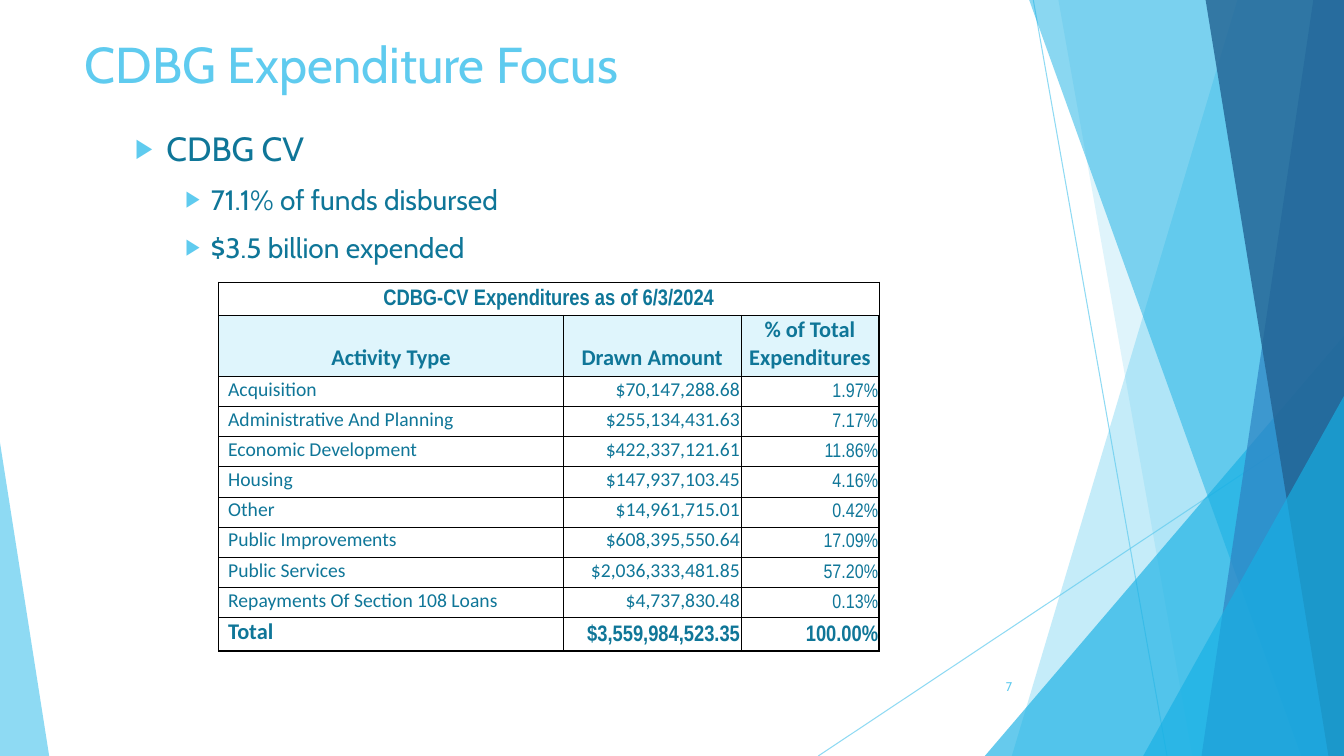
import pptx
import pptx.util
import pptx.dml.color
import pptx.enum.shapes
import pptx.enum.text
import pptx.oxml
import pptx.oxml.ns
from pptx.dml.color import RGBColor
from pptx.util import Cm

SKY = RGBColor(0x5F, 0xCB, 0xEF)
CYAN = RGBColor(0x17, 0xB0, 0xE4)
BLUE = RGBColor(0x2E, 0x83, 0xC3)
NAVY = RGBColor(0x22, 0x62, 0x92)
TEAL = RGBColor(0x0F, 0x76, 0x98)
PALE = RGBColor(0xDF, 0xF5, 0xFC)
BLACK = RGBColor(0, 0, 0)

ALIGN = pptx.enum.text.PP_ALIGN
ANCHOR = pptx.enum.text.MSO_ANCHOR
WIDTH, HEIGHT = 33.87, 19.05

ACTIVITIES = [
    ("Acquisition", "$70,147,288.68", "1.97%"),
    ("Administrative And Planning", "$255,134,431.63", "7.17%"),
    ("Economic Development", "$422,337,121.61", "11.86%"),
    ("Housing", "$147,937,103.45", "4.16%"),
    ("Other", "$14,961,715.01", "0.42%"),
    ("Public Improvements", "$608,395,550.64", "17.09%"),
    ("Public Services", "$2,036,333,481.85", "57.20%"),
    ("Repayments Of Section 108 Loans", "$4,737,830.48", "0.13%"),
]
ROWS = [
    ("CDBG-CV Expenditures as of 6/3/2024", "", ""),
    ("Activity Type", "Drawn Amount", "% of Total Expenditures"),
    *ACTIVITIES,
    ("Total", "$3,559,984,523.35", "100.00%"),
]


def add_xml(parent, tag, **attributes):
    element = pptx.oxml.parse_xml(f'<a:{tag} {pptx.oxml.ns.nsdecls("a")}/>')
    for name, value in attributes.items():
        element.set(name, str(value))
    parent.append(element)
    return element


def write(para, text, size=14, font="Cabin", color=TEAL, bold=False, align=None):
    para.alignment = align
    span = para.add_run()
    span.text = text
    span.font.size = pptx.util.Pt(size)
    span.font.name = font
    span.font.bold = bold
    span.font.color.rgb = color


def fade(shape, percent):
    color = shape._element.spPr.find(".//" + pptx.oxml.ns.qn("a:srgbClr"))
    add_xml(color, "alpha", val=percent * 1000)


class Page:
    def __init__(self, deck):
        self.slide = deck.slides.add_slide(deck.slide_layouts[1])
        self.shapes = self.slide.shapes

    def line(self, x1, y1, x2, y2):
        line = self.shapes.add_connector(
            pptx.enum.shapes.MSO_CONNECTOR.STRAIGHT, Cm(x1), Cm(y1), Cm(x2), Cm(y2))
        line.line.color.rgb = SKY
        line.line.width = pptx.util.Pt(0.75)
        fade(line, 70)
        add_xml(line._element.spPr, "effectLst")

    def paint(self, shape, color, opacity):
        shape.shadow.inherit = False
        shape.fill.solid()
        shape.fill.fore_color.rgb = color
        shape.line.fill.background()
        fade(shape, opacity)

    def band(self, top_x, bottom_x, color, opacity):
        """Fill from a slanted left edge to the right side of the slide."""
        outline = self.shapes.build_freeform(Cm(top_x), Cm(-0.02))
        outline.add_line_segments(
            [(Cm(WIDTH), Cm(-0.02)), (Cm(WIDTH), Cm(HEIGHT)), (Cm(bottom_x), Cm(HEIGHT))])
        self.paint(outline.convert_to_shape(), color, opacity)

    def triangle(self, left, top, width, apex, color, opacity):
        shape = self.shapes.add_shape(
            pptx.enum.shapes.MSO_SHAPE.ISOSCELES_TRIANGLE,
            Cm(left), Cm(top), Cm(width), Cm(HEIGHT - top))
        shape.adjustments[0] = apex
        self.paint(shape, color, opacity)

    def place(self, box, left, top, width, height, anchor=ANCHOR.TOP):
        box.left, box.top, box.width, box.height = Cm(left), Cm(top), Cm(width), Cm(height)
        frame = box.text_frame
        frame.word_wrap = True
        frame.auto_size = pptx.enum.text.MSO_AUTO_SIZE.NONE
        frame.vertical_anchor = anchor
        self.shapes._spTree.append(box._element)
        return frame

    def title(self, text):
        frame = self.place(self.shapes.title, 1.88, 0.71, 23.88, 1.96)
        write(frame.paragraphs[0], text, size=36, color=SKY, align=ALIGN.LEFT)

    def bullets(self, items):
        frame = self.place(self.slide.placeholders[1], 1.88, 3.1, 23.88, 10.77)
        for index, (level, text) in enumerate(items):
            para = frame.add_paragraph() if index else frame.paragraphs[0]
            para.level = level
            margin, hang, size = [(2.06, 0.79, 24), (3.18, 0.64, 20)][level]
            props = para._p.get_or_add_pPr()
            props.set("marL", str(Cm(margin)))
            props.set("indent", str(-Cm(hang)))
            add_xml(add_xml(props, "buClr"), "srgbClr", val=SKY)
            add_xml(props, "buSzPct", val=80000)
            add_xml(props, "buChar", char="▶")
            para.space_before = pptx.util.Pt(10 if index else 0)
            write(para, text, size=size)

    def number(self, text):
        box = self.shapes.add_textbox(0, 0, 0, 0)
        frame = self.place(box, 23.85, 16.79, 1.91, 1.02, ANCHOR.MIDDLE)
        write(frame.paragraphs[0], text, size=9, color=SKY, align=ALIGN.RIGHT)

    def border(self, cell, side, points):
        edge = add_xml(cell._tc.get_or_add_tcPr(), side, w=pptx.util.Pt(points))
        add_xml(add_xml(edge, "solidFill"), "srgbClr", val=BLACK)

    def table(self, left, top, widths, heights, rows):
        table = self.shapes.add_table(
            len(rows), len(widths), Cm(left), Cm(top),
            Cm(sum(widths)), Cm(sum(heights))).table
        table.first_row = table.horz_banding = False
        for column, width in zip(table.columns, widths):
            column.width = Cm(width)
        for row, height in zip(table.rows, heights):
            row.height = Cm(height)
        table.cell(0, 0).merge(table.cell(0, len(widths) - 1))
        last = len(rows) - 1
        for r, values in enumerate(rows):
            for c, text in enumerate(values):
                cell = table.cell(r, c)
                cell.vertical_anchor = ANCHOR.BOTTOM
                cell.margin_left = Cm(0.24 if c == 0 and r > 1 else 0.02)
                cell.margin_top = cell.margin_right = Cm(0.02)
                cell.margin_bottom = Cm(0.13)
                # Heavy lines outside and around the heading, thin lines inside
                self.border(cell, "lnL", 1 if c == 0 else 0.5)
                self.border(cell, "lnR", 1 if c == len(widths) - 1 else 0.5)
                self.border(cell, "lnT", 1 if r < 2 else 0.5)
                self.border(cell, "lnB", 1 if r in (0, last) else 0.5)
                if r == 1:
                    cell.fill.solid()
                    cell.fill.fore_color.rgb = PALE
                else:
                    cell.fill.background()
                if text:
                    strong = r < 2 or r == last
                    narrow = r == 0 or (r > 1 and c == 2) or (r == last and c > 0)
                    write(cell.text_frame.paragraphs[0], text,
                          size=16 if strong else 14, bold=strong,
                          font="Arial Narrow" if narrow else "Calibri",
                          align=ALIGN.CENTER if r < 2 else ALIGN.RIGHT if c else ALIGN.LEFT)


def main():
    deck = pptx.Presentation()
    deck.slide_width, deck.slide_height = Cm(WIDTH), Cm(HEIGHT)
    page = Page(deck)

    # Background facets
    page.line(26.04, 0, 29.41, HEIGHT)
    page.line(WIDTH, 10.24, 20.62, HEIGHT)
    page.band(31.19, 25.5, SKY, 36)
    page.band(26.67, 30.05, SKY, 20)
    page.triangle(24.82, 8.46, 9.05, 1, CYAN, 66)
    page.band(25.93, 32.79, CYAN, 50)
    page.band(33.1, 30.28, BLUE, 70)
    page.band(30.38, 33.48, NAVY, 80)
    page.triangle(28.81, 9.98, 5.06, 1, CYAN, 66)
    page.triangle(0, 11.15, 1.24, 0, SKY, 70)

    # Text
    page.title("CDBG Expenditure Focus")
    page.bullets([(0, "CDBG CV"), (1, "71.1% of funds disbursed"), (1, "$3.5 billion expended")])
    page.number("7")

    # Expenditure table
    heights = [0.84, 1.52] + [0.76] * len(ACTIVITIES) + [0.84]
    page.table(5.51, 7.11, [8.69, 4.47, 3.48], heights, ROWS)

    deck.save("out.pptx")


if __name__ == "__main__":
    main()
